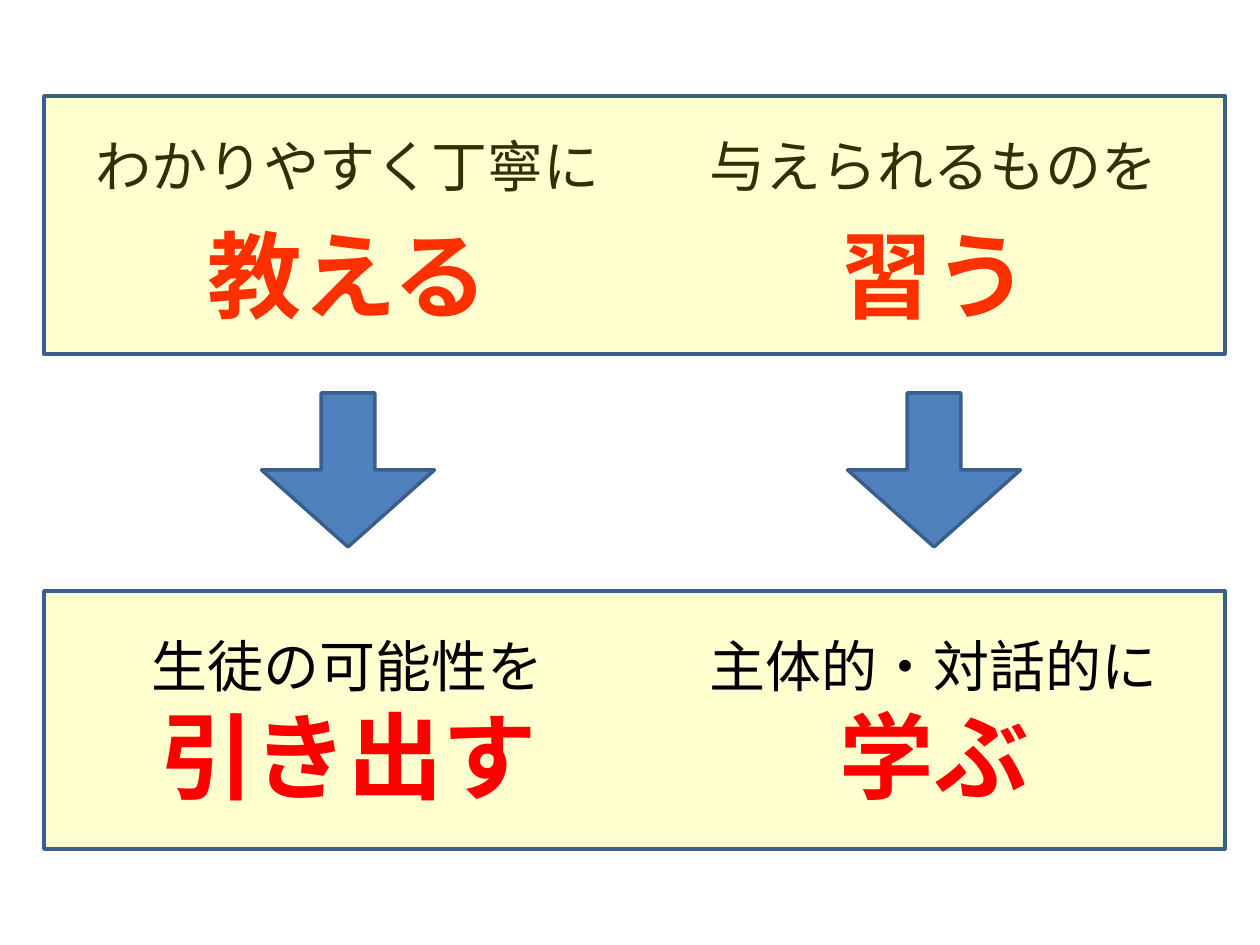
from lxml.etree import SubElement
from pptx import Presentation
from pptx.dml.color import RGBColor
from pptx.enum.shapes import MSO_SHAPE
from pptx.enum.text import PP_ALIGN
from pptx.oxml.ns import qn
from pptx.util import Emu, Pt

FONT = "Roboto"
BLACK, RED, YELLOW = "000000", "FF0000", "FFFF00"
BLUE, DARK_BLUE = "4F81BD", "3A5F8C"
COLUMN_W, ARROW_W = 646, 173


def px(n):
    """Turn pixels at 126 to the inch into EMU."""
    return Emu(round(n * 914400 / 126))


def color(value):
    """Turn a hex string into a colour."""
    return RGBColor.from_string(value)


def add_block(s, kind, x, y, w, h, fill, alpha=None):
    """Add an outlined preset shape, with an optional opacity in percent."""
    sp = s.shapes.add_shape(kind, px(x), px(y), px(w), px(h))
    sp.shadow.inherit = False
    sp.fill.solid()
    sp.fill.fore_color.rgb = color(fill)
    sp.line.color.rgb = color(DARK_BLUE)
    sp.line.width = Pt(2)
    if alpha is not None:
        clr = sp._element.spPr.find(qn("a:solidFill"))[0]
        SubElement(clr, qn("a:alpha"), val=str(alpha * 1000))
    return sp


def add_panel(s, y):
    """Add a pale yellow panel across the slide."""
    add_block(s, MSO_SHAPE.RECTANGLE, 44, y, 1181, 258, YELLOW, alpha=19)


def add_arrow(s, column_x):
    """Add a down arrow centred on a text column."""
    x = column_x + (COLUMN_W - ARROW_W) / 2
    sp = add_block(s, MSO_SHAPE.DOWN_ARROW, x, 393, ARROW_W, 154, BLUE)
    sp.adjustments[0] = 0.31
    sp.adjustments[1] = 0.5


def write(p, text, size, rgb, bold=False, gap=0):
    """Write a centred paragraph, with its gap as a share of the size."""
    p.alignment = PP_ALIGN.CENTER
    p.space_before = Pt(size * gap)
    r = p.add_run()
    r.text = text
    r.font.size = Pt(size)
    r.font.bold = bold
    r.font.color.rgb = color(rgb)
    r.font.name = FONT
    SubElement(r._r.get_or_add_rPr(), qn("a:ea"), typeface=FONT)


def add_message(s, x, y, h, lead, verb, gap=0):
    """Add a lead-in line above a large red verb."""
    tf = s.shapes.add_textbox(px(x), px(y), px(COLUMN_W), px(h)).text_frame
    tf.word_wrap = True
    write(tf.paragraphs[0], lead, 32, BLACK, gap=gap)
    write(tf.add_paragraph(), verb, 54, RED, bold=True, gap=gap)


def main():
    """Build the slide and save it."""
    prs = Presentation()
    prs.slide_width, prs.slide_height = px(1260), px(945)
    s = prs.slides.add_slide(prs.slide_layouts[6])
    columns = [
        (25, ("わかりやすく丁寧に", "教える"), ("生徒の可能性を", "引き出す")),
        (611, ("与えられるものを", "習う"), ("主体的・対話的に", "学ぶ")),
    ]
    add_panel(s, 591)
    for x, before, after in columns:
        add_message(s, x, 125, 243, *before, gap=0.2)
        add_message(s, x, 625, 195, *after)
        add_arrow(s, x)
    add_panel(s, 96)
    prs.save("out.pptx")


if __name__ == "__main__":
    main()
